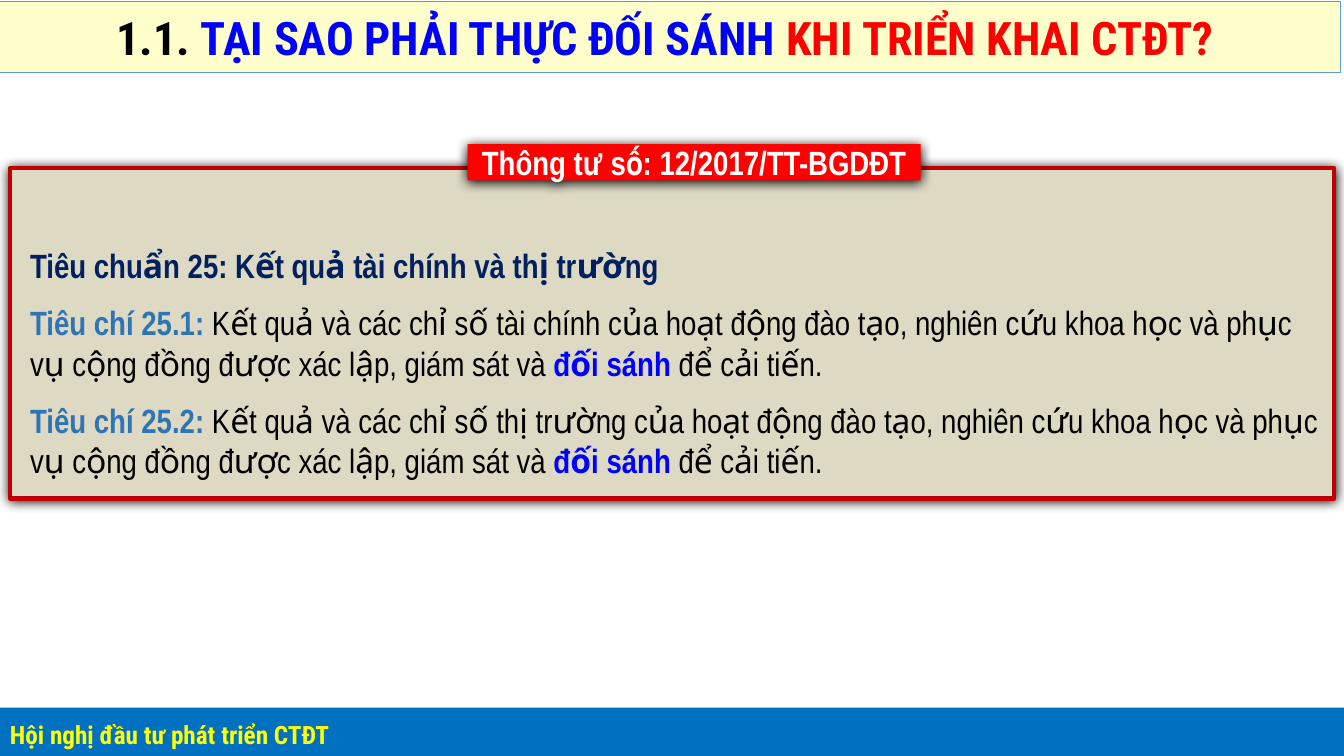
from dataclasses import dataclass

from lxml import etree
from pptx import Presentation
from pptx import util as u
from pptx.dml.color import RGBColor
from pptx.enum import lang, shapes, text
from pptx.oxml import ns

COLOURS = {
    "cream": "FFFFCC", "sky": "5B9BD5", "ocean": "0070C0", "sand": "DDD9C3",
    "crimson": "C00000", "red": "FF0000", "blue": "0000FF", "navy": "002060",
    "steel": "2E75B6", "yellow": "FFFF00", "black": "000000", "white": "FFFFFF",
}
HEADING_FONT, BODY_FONT = "Roboto Condensed", "Arial Narrow"

# Grid: 100 columns by 75 rows
SLIDE_WIDTH, SLIDE_HEIGHT = u.Inches(13.33), u.Inches(7.5)
COLUMN, ROW = SLIDE_WIDTH / 100, SLIDE_HEIGHT / 75


@dataclass
class Area:
    column: float
    row: float
    columns: float
    rows: float

    def box(self) -> tuple[int, int, int, int]:
        return (round(self.column * COLUMN), round(self.row * ROW),
                round(self.columns * COLUMN), round(self.rows * ROW))


@dataclass
class Words:
    text: str
    colour: str
    bold: bool = True


@dataclass
class Style:
    font: str
    size: float
    align: text.PP_ALIGN = text.PP_ALIGN.LEFT
    before: float = 0
    after: float = 0
    spacing: float = 1.0
    language: lang.MSO_LANGUAGE_ID | None = None


@dataclass
class Panel:
    area: Area
    fill: str
    line: str | None = None
    line_width: float = 0
    shadow: bool = False


def colour(name: str) -> RGBColor:
    return RGBColor.from_string(COLOURS[name])


def add_shadow(shape) -> None:
    effects = shape._element.spPr.find(ns.qn("a:effectLst"))
    shadow = etree.SubElement(effects, ns.qn("a:outerShdw"), blurRad=str(u.Pt(8.5)),
                              dist=str(u.Pt(1)), dir="5400000", algn="t", rotWithShape="0")
    etree.SubElement(shadow, ns.qn("a:srgbClr"), val=COLOURS["black"])


def add_panel(parent, panel: Panel):
    shape = parent.add_shape(shapes.MSO_SHAPE.RECTANGLE, *panel.area.box())
    shape.shadow.inherit = False
    shape.fill.solid()
    shape.fill.fore_color.rgb = colour(panel.fill)
    if panel.line:
        shape.line.color.rgb = colour(panel.line)
        shape.line.width = u.Pt(panel.line_width)
        etree.SubElement(shape._element.spPr.find(ns.qn("a:ln")), ns.qn("a:round"))
    else:
        shape.line.fill.background()
    if panel.shadow:
        add_shadow(shape)
    return shape


def write(shape, paragraphs: list[list[Words]], style: Style) -> None:
    frame = shape.text_frame
    frame.word_wrap = True
    for index, pieces in enumerate(paragraphs):
        paragraph = frame.add_paragraph() if index else frame.paragraphs[0]
        paragraph.alignment = style.align
        paragraph.space_before = u.Pt(style.before)
        paragraph.space_after = u.Pt(style.after)
        paragraph.line_spacing = style.spacing
        for words in pieces:
            run = paragraph.add_run()
            run.text = words.text
            run.font.name = style.font
            run.font.size = u.Pt(style.size)
            run.font.bold = words.bold
            run.font.color.rgb = colour(words.colour)
            if style.language:
                run.font.language_id = style.language


def criterion(number: str, subject: str) -> list[Words]:
    return [
        Words(f"Tiêu chí {number}: ", "steel"),
        Words(f"Kết quả và các chỉ số {subject} của hoạt động đào tạo, nghiên cứu khoa học "
              "và phục vụ cộng đồng được xác lập, giám sát và ", "black", False),
        Words("đối sánh ", "blue"),
        Words("để cải tiến.", "black", False),
    ]


def build_title(slide) -> None:
    title = add_panel(slide.shapes, Panel(Area(-0.25, 0.14, 100, 7.04), "cream", "sky", 0.5))
    title.text_frame.margin_left = round(8.93 * COLUMN)
    title.text_frame.vertical_anchor = text.MSO_ANCHOR.MIDDLE
    write(title, [[Words("1.1. ", "black"),
                   Words("TẠI SAO PHẢI THỰC ĐỐI SÁNH ", "blue"),
                   Words("KHI TRIỂN KHAI CTĐT?", "red")]], Style(HEADING_FONT, 33))


def build_footer(slide) -> None:
    footer = add_panel(slide.shapes, Panel(Area(0, 70.2, 100, 5.1), "ocean"))
    footer.text_frame.vertical_anchor = text.MSO_ANCHOR.MIDDLE
    write(footer, [[Words("Hội nghị đầu tư phát triển CTĐT", "yellow")]],
          Style(HEADING_FONT, 18, before=12, after=6, spacing=1.1))


def build_circular(slide) -> None:
    group = slide.shapes.add_group_shape().shapes
    add_panel(group, Panel(Area(0.77, 16.65, 98.5, 32.8), "sand", "crimson", 3, True))

    # Badge on the frame's top edge
    badge = add_panel(group, Panel(Area(34.8, 14.3, 33.7, 3.6), "red", shadow=True))
    badge.text_frame.vertical_anchor = text.MSO_ANCHOR.MIDDLE
    write(badge, [[Words("Thông tư số: 12/2017/TT-BGDĐT", "white")]],
          Style(BODY_FONT, 24, text.PP_ALIGN.CENTER))

    # Standard and its criteria
    body = group.add_textbox(*Area(1.5, 23.83, 97.75, 24.6).box())
    body.text_frame.auto_size = text.MSO_AUTO_SIZE.SHAPE_TO_FIT_TEXT
    write(body, [[Words("Tiêu chuẩn 25: Kết quả tài chính và thị trường", "navy")],
                 criterion("25.1", "tài chính"),
                 criterion("25.2", "thị trường")],
          Style(BODY_FONT, 24, before=6, after=6, language=lang.MSO_LANGUAGE_ID.VIETNAMESE))


def main() -> None:
    presentation = Presentation()
    presentation.slide_width, presentation.slide_height = SLIDE_WIDTH, SLIDE_HEIGHT
    slide = presentation.slides.add_slide(presentation.slide_layouts[6])
    build_title(slide)
    build_footer(slide)
    build_circular(slide)
    presentation.save("out.pptx")


if __name__ == "__main__":
    main()
